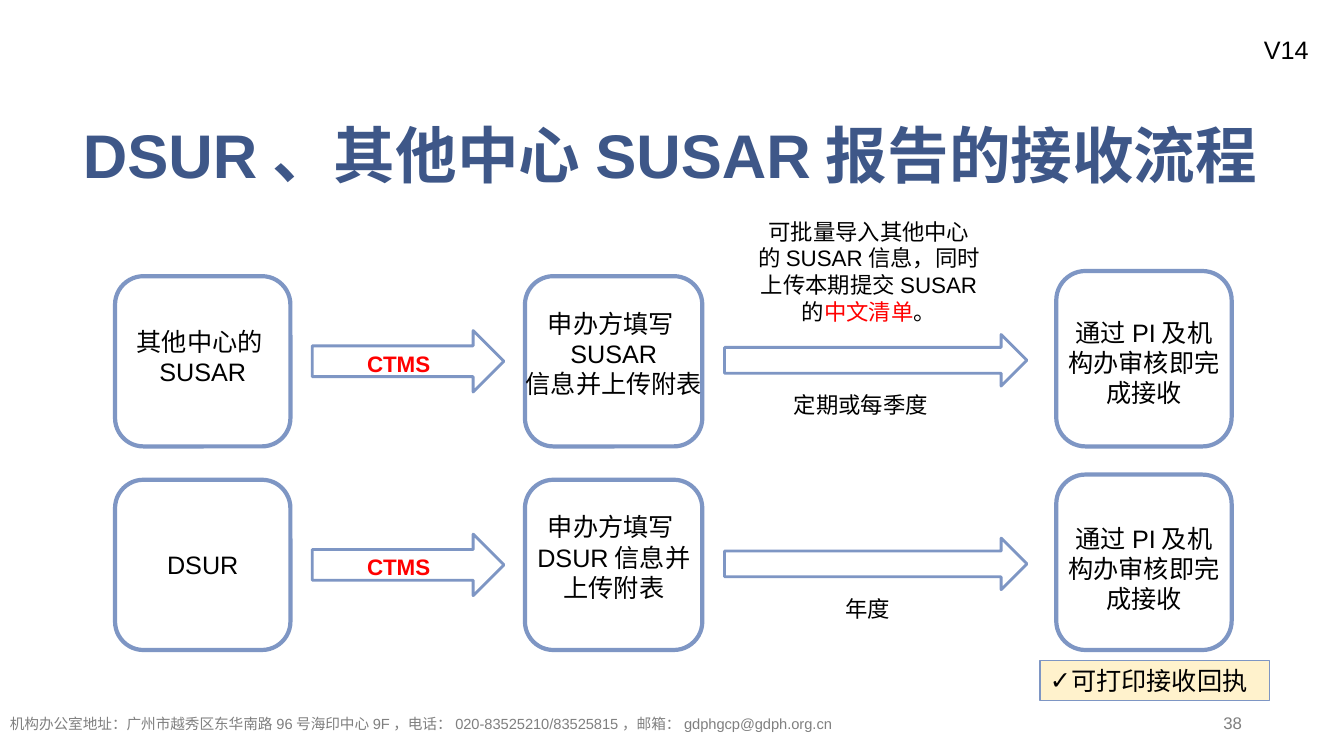
from lxml import etree
from pptx import Presentation
from pptx.dml.color import RGBColor
from pptx.enum.shapes import MSO_SHAPE as SHAPE
from pptx.enum.text import MSO_ANCHOR as ANCHOR, PP_ALIGN as ALIGN
from pptx.oxml.ns import qn
from pptx.util import Cm, Pt

TITLE_BLUE = RGBColor(0x3E, 0x57, 0x88)
OUTLINE = RGBColor(0x7E, 0x96, 0xC4)
CREAM = RGBColor(0xFF, 0xF2, 0xCC)
RED = RGBColor(0xFF, 0, 0)
BLACK = RGBColor(0, 0, 0)
GREY = RGBColor(0x80, 0x80, 0x80)
PAGE_GREY = RGBColor(0x7F, 0x7F, 0x7F)

prs = Presentation()
prs.slide_width, prs.slide_height = Cm(33.87), Cm(19.05)
s = prs.slides.add_slide(prs.slide_layouts[6])


def add_text(box, lines, size=18, color=BLACK, bold=False, align=ALIGN.CENTER,
             anchor=ANCHOR.TOP, spacing=None, wrap=True):
    """Add a text box; each line is a string or a list of (text, colour) runs."""
    sp = s.shapes.add_textbox(*map(Cm, box))
    tf = sp.text_frame
    tf.word_wrap, tf.vertical_anchor = wrap, anchor
    for i, line in enumerate(lines):
        p = tf.add_paragraph() if i else tf.paragraphs[0]
        p.alignment, p.line_spacing = align, spacing
        for text, run_color in [(line, color)] if isinstance(line, str) else line:
            r = p.add_run()
            r.text = text
            font = {"name": "Arial", "size": Pt(size), "bold": bold}
            for key, value in font.items():
                setattr(r.font, key, value)
            r.font.color.rgb = run_color
    return sp


def add_outline(kind, box, width, fill=None):
    sp = s.shapes.add_shape(kind, *map(Cm, box))
    sp.shadow.inherit = False
    if fill is None:
        sp.fill.background()
    else:
        sp.fill.solid()
        sp.fill.fore_color.rgb = fill
    sp.line.color.rgb = OUTLINE
    sp.line.width = Pt(width)
    return sp


# Heading and version mark
add_text((31.6, 0.74, 2.2, 1.02), ["V14"], align=ALIGN.LEFT, wrap=False)
add_text((1.8, 2.03, 30.18, 3.33), ["DSUR、其他中心SUSAR报告的接收流程"], 44,
         TITLE_BLUE, bold=True, anchor=ANCHOR.MIDDLE, spacing=1.2)

# Two flows: (report text, its top), (sponsor step), (period, its left), review top
FLOWS = [
    (["其他中心的SUSAR"], 8.1, ["申办方填写SUSAR", "信息并上传附表"],
     "定期或每季度", 19.76, 7.87),
    (["DSUR"], 13.72, ["申办方填写DSUR信息并上传附表"], "年度", 21.06, 13.06),
]
ROW_TOP, ROW_STEP = 6.96, 5.13
for row, (report, report_top, step, period, period_left, review_top) in enumerate(FLOWS):
    top = ROW_TOP + row * ROW_STEP
    add_outline(SHAPE.ROUNDED_RECTANGLE, (2.9, top, 4.42, 4.29), 3)
    add_text((2.9, report_top, 4.42, 1.8), report)

    add_outline(SHAPE.RIGHT_ARROW, (7.87, top + 1.37, 4.83, 1.55), 2)
    sp = add_text((8.23, top + 1.73, 2.97, 0.94), ["CTMS"], 16, RED, bold=True,
                  align=ALIGN.LEFT, wrap=False)
    sp.text_frame.margin_left = Cm(1.02)

    add_outline(SHAPE.ROUNDED_RECTANGLE, (13.23, top, 4.47, 4.29), 3)
    add_text((12.98, top + 0.68, 4.98, 4.09), step)

    add_outline(SHAPE.RIGHT_ARROW, (18.26, top + 1.47, 7.62, 1.3), 2)
    add_text((period_left, top + 2.77, 4.27, 0.94), [period], 16, align=ALIGN.LEFT)

    add_outline(SHAPE.ROUNDED_RECTANGLE, (26.62, top - 0.13, 4.42, 4.42), 3)
    add_text((26.62, review_top, 4.42, 2.57), ["通过PI及机构办审核即完成接收"])

add_text((18.8, 5.36, 6.2, 3.07),
         ["可批量导入其他中心", "的SUSAR信息，同时", "上传本期提交SUSAR",
          [("的", BLACK), ("中文清单", RED), ("。", BLACK)]], 16)

# Receipt note with a tick bullet
sp = add_outline(SHAPE.RECTANGLE, (26.21, 16.64, 5.79, 1.02), 0.75, CREAM)
p = sp.text_frame.paragraphs[0]
p.alignment = ALIGN.LEFT
pPr = p._p.get_or_add_pPr()
pPr.set("marL", str(Cm(0.52)))
pPr.set("indent", str(-Cm(0.52)))
etree.SubElement(pPr, qn("a:buFont")).set("typeface", "Arial")
etree.SubElement(pPr, qn("a:buChar")).set("char", "✓")
r = p.add_run()
r.text = "可打印接收回执"
r.font.name, r.font.size = "Arial", Pt(18)
r.font.color.rgb = BLACK

# Footer
add_text((0, 17.48, 25.88, 1.4),
         ["机构办公室地址：广州市越秀区东华南路96号海印中心9F，"
          "电话：020-83525210/83525815，邮箱：gdphgcp@gdph.org.cn"],
         10.5, GREY, align=ALIGN.LEFT, anchor=ANCHOR.MIDDLE, spacing=1.2)
add_text((23.93, 17.65, 7.62, 1.02), ["38"], 12, PAGE_GREY, align=ALIGN.RIGHT,
         anchor=ANCHOR.MIDDLE, spacing=1.2)

prs.save("out.pptx")
